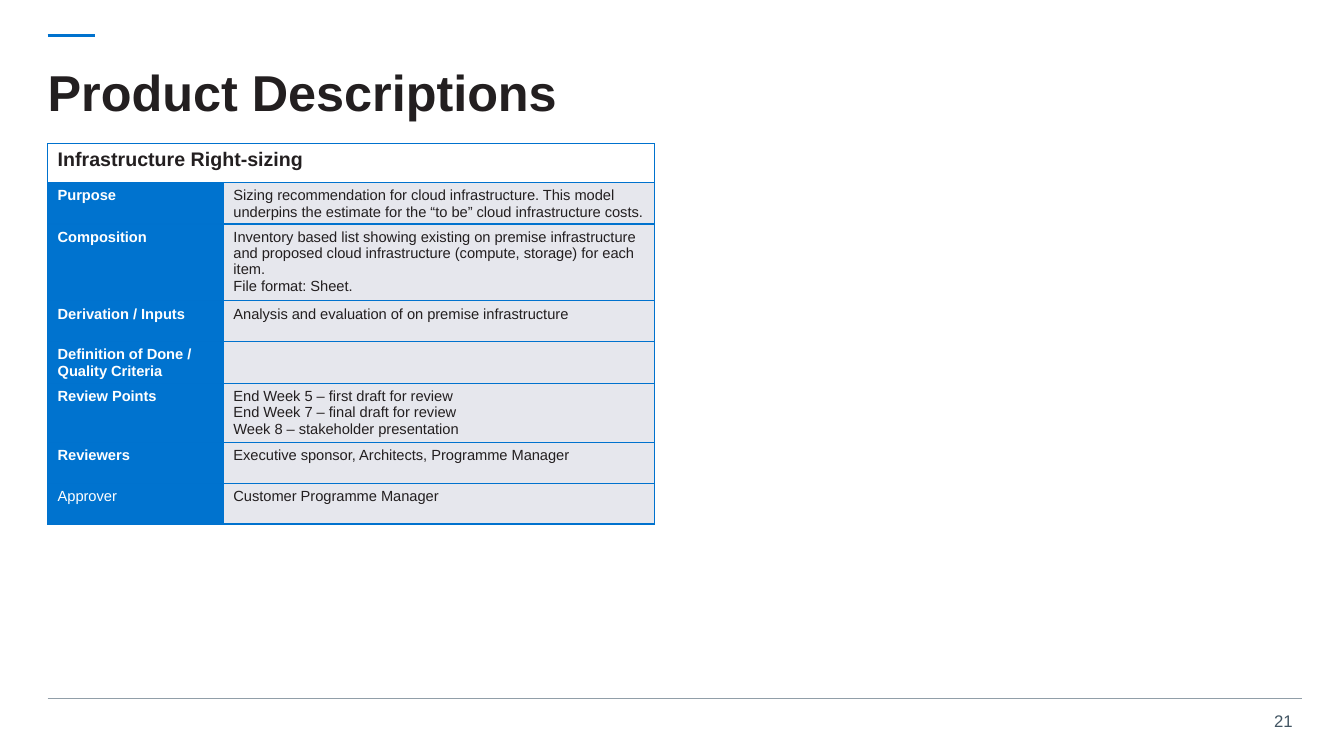
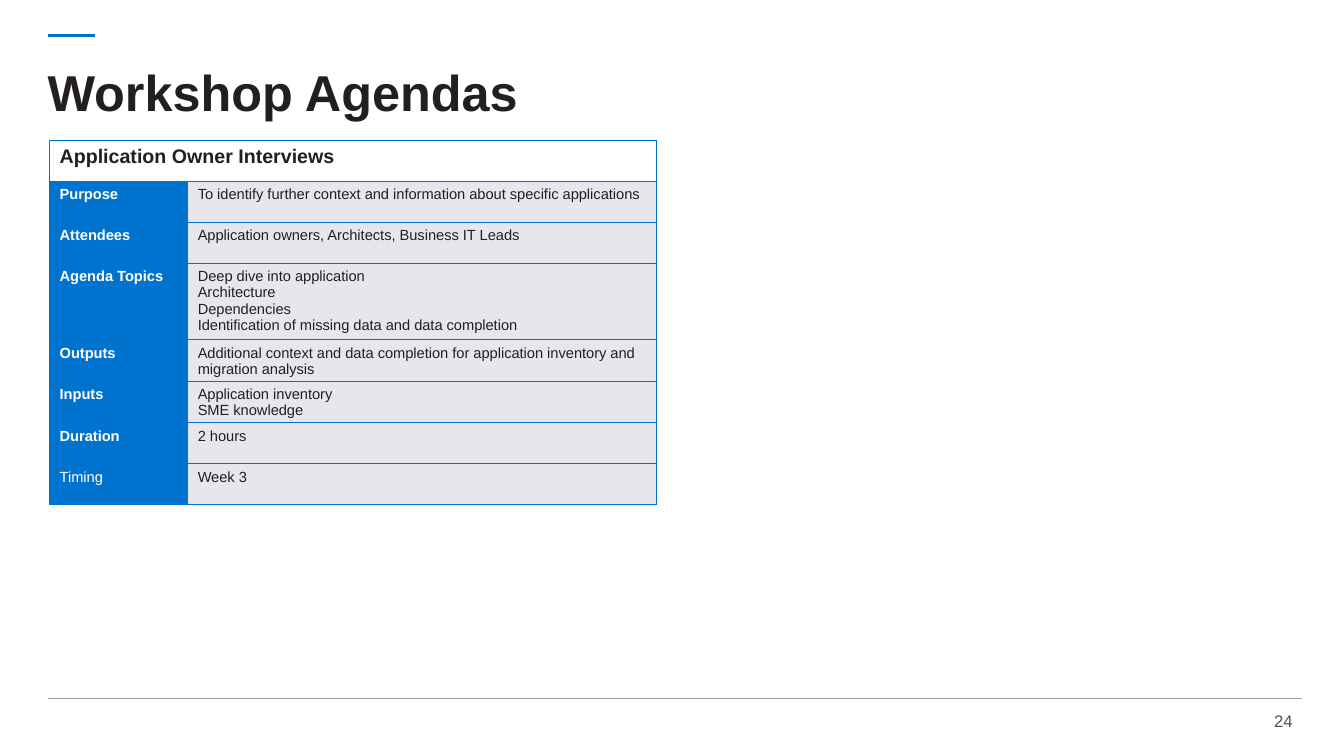
from lxml.etree import SubElement
from pptx import Presentation
from pptx.dml.color import RGBColor
from pptx.enum.shapes import MSO_CONNECTOR as Link
from pptx.enum.text import MSO_ANCHOR as Anchor, MSO_AUTO_SIZE as Fit, PP_ALIGN as Align
from pptx.oxml.ns import qn
from pptx.util import Cm, Pt

WHITE = RGBColor(0xFF, 0xFF, 0xFF)
INK = RGBColor(0x23, 0x1F, 0x20)
BLUE = RGBColor(0x00, 0x72, 0xCE)
LABEL = RGBColor(0x00, 0x73, 0xCF)
PALE = RGBColor(0xE6, 0xE7, 0xED)
GREY = RGBColor(0x91, 0x9E, 0xA8)
SLATE = RGBColor(0x42, 0x55, 0x63)

FONT = "Arial"
LEFT, RIGHT = Cm(1.2), Cm(32.8)
WIDTH = RIGHT - LEFT

SIZING = [
    ("Purpose", "Sizing recommendation for cloud infrastructure. This model underpins "
                "the estimate for the “to be” cloud infrastructure costs."),
    ("Composition", "Inventory based list showing existing on premise infrastructure and "
                    "proposed cloud infrastructure (compute, storage) for each item.\n"
                    "File format: Sheet."),
    ("Derivation / Inputs", "Analysis and evaluation of on premise infrastructure"),
    ("Definition of Done / Quality Criteria", ""),
    ("Review Points", "End Week 5 – first draft for review\n"
                      "End Week 7 – final draft for review\n"
                      "Week 8 – stakeholder presentation"),
    ("Reviewers", "Executive sponsor, Architects, Programme Manager"),
    ("Approver", "Customer Programme Manager"),
]
OWNERS = [
    ("Purpose", "To identify further context and information about specific applications"),
    ("Attendees", "Application owners, Architects, Business IT Leads"),
    ("Agenda Topics", "Deep dive into application\nArchitecture\nDependencies\n"
                      "Identification of missing data and data completion"),
    ("Outputs", "Additional context and data completion for application inventory "
                "and migration analysis"),
    ("Inputs", "Application inventory\nSME knowledge"),
    ("Duration", "2 hours"),
    ("Timing", "Week 3"),
]


def write(frame, text, size, color, bold=False):
    frame.text = text
    for para in frame.paragraphs:
        for run in para.runs:
            font = run.font
            font.name, font.size, font.bold = FONT, Pt(size), bold
            font.color.rgb = color


def rule(slide, y, width, color, weight):
    line = slide.shapes.add_connector(Link.STRAIGHT, LEFT, y, LEFT + width, y)
    line.line.color.rgb, line.line.width = color, Pt(weight)
    SubElement(line._element.spPr, qn("a:effectLst"))


def page(deck, title, number):
    """Add a slide with its title, rules and page number."""
    slide = deck.slides.add_slide(deck.slide_layouts[5])
    rule(slide, Cm(0.9), Cm(1.2), BLUE, 2)
    rule(slide, Cm(17.6), WIDTH, GREY, 0.75)

    head = slide.shapes.title
    head.left, head.top, head.width, head.height = LEFT, Cm(1.2), WIDTH, Cm(2.4)
    frame = head.text_frame
    write(frame, title, 36, INK, True)
    frame.auto_size, frame.vertical_anchor = Fit.NONE, Anchor.MIDDLE
    frame.margin_left = frame.margin_right = frame.margin_top = frame.margin_bottom = 0
    frame.paragraphs[0].alignment = Align.LEFT
    frame.paragraphs[0].line_spacing = 0.9

    foot = slide.shapes.add_textbox(Cm(31.33), Cm(17.78), Cm(1.5), Cm(0.77)).text_frame
    foot.word_wrap = True
    write(foot, number, 12, SLATE)
    foot.paragraphs[0].alignment = Align.RIGHT
    return slide


def paint(cell, color):
    """Give the cell a blue border and a plain fill."""
    props = cell._tc.get_or_add_tcPr()
    for side in ("a:lnL", "a:lnR", "a:lnT", "a:lnB"):
        edge = SubElement(props, qn(side), w=str(Pt(1)))
        SubElement(SubElement(edge, qn("a:solidFill")), qn("a:srgbClr"), val=str(BLUE))
    cell.fill.solid()
    cell.fill.fore_color.rgb = color
    cell.margin_bottom = Cm(0.03)


def sheet(slide, left, top, widths, first, heading, items):
    """Add a headed table of labels and details; the last label is not bold."""
    row = Cm(1.03)
    table = slide.shapes.add_table(len(items) + 1, 2, left, top, sum(widths),
                                   first + row * len(items)).table
    table.first_row = table.horz_banding = False
    for col, width in zip(table.columns, widths):
        col.width = width
    for line in table.rows:
        line.height = row
    table.rows[0].height = first

    for cell in table.rows[0].cells:
        paint(cell, WHITE)
    table.cell(0, 0).merge(table.cell(0, 1))
    write(table.cell(0, 0).text_frame, heading, 14, INK, True)

    for at, (label, detail) in enumerate(items, 1):
        name, body = table.cell(at, 0), table.cell(at, 1)
        paint(name, LABEL)
        paint(body, PALE)
        write(name.text_frame, label, 10.5, WHITE, at < len(items))
        write(body.text_frame, detail, 10.5, INK)


def main():
    deck = Presentation()
    deck.slide_width, deck.slide_height = Cm(33.87), Cm(19.05)
    slide = page(deck, "Product Descriptions", "21")
    sheet(slide, LEFT, Cm(3.62), (Cm(4.43), Cm(10.87)), Cm(0.98),
          "Infrastructure Right-sizing", SIZING)
    slide = page(deck, "Workshop Agendas", "24")
    sheet(slide, Cm(1.25), Cm(3.54), (Cm(3.48), Cm(11.82)), Cm(1.03),
          "Application Owner Interviews", OWNERS)
    deck.save("out.pptx")


if __name__ == "__main__":
    main()
